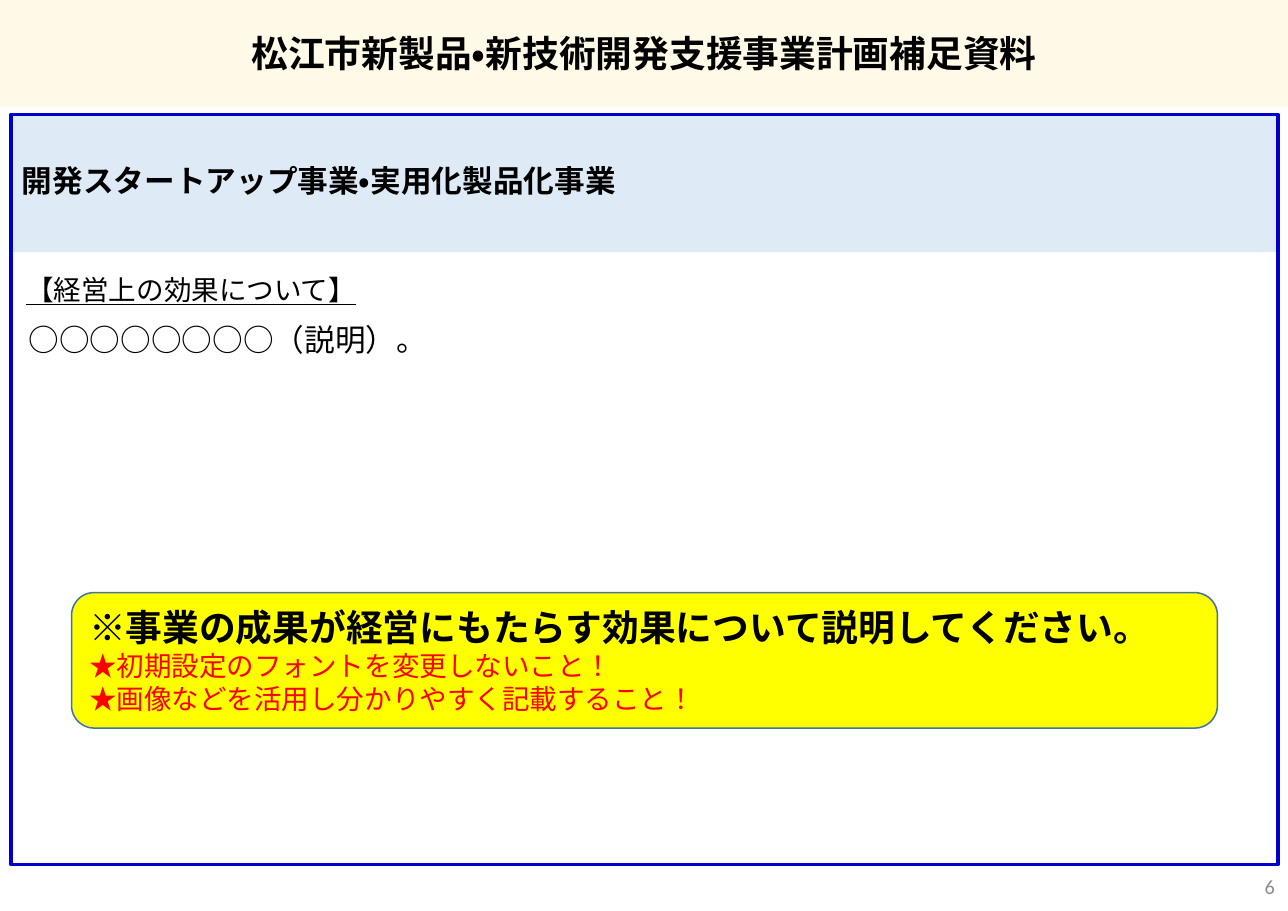
from dataclasses import dataclass

from lxml import etree
from pptx import Presentation
from pptx import util as u
from pptx.dml.color import RGBColor
from pptx.enum import lang, shapes, text


@dataclass(frozen=True)
class Theme:
    """Colours, fonts and type sizes of the slide."""
    black: str = "000000"
    red: str = "FF0000"
    grey: str = "8C8C8C"
    cream: str = "FFF9E7"
    pale: str = "DEEBF7"
    navy: str = "0000CC"
    yellow: str = "FFFF00"
    steel: str = "43739E"
    sans: str = "Noto Sans CJK JP"
    latin: str = "Calibri"
    head: str = "Arial"
    large: float = 24
    medium: float = 20
    small: float = 18
    tiny: float = 13.2


THEME = Theme()
ALIGN = text.PP_ALIGN
ANCHOR = text.MSO_ANCHOR


def place(item, box):
    """Move an item to a box given in inches."""
    item.left, item.top, item.width, item.height = map(u.Inches, box)


def paint(item, fill=None, line=None, width=1):
    """Set the fill and outline of a shape."""
    if fill:
        item.fill.solid()
        item.fill.fore_color.rgb = RGBColor.from_string(fill)
    else:
        item.fill.background()
    if line:
        item.line.color.rgb = RGBColor.from_string(line)
        item.line.width = u.Pt(width)
    else:
        item.line.fill.background()


def block(slide, kind, box, **look):
    """Add a flat preset shape."""
    item = slide.shapes.add_shape(kind, *map(u.Inches, box))
    item.shadow.inherit = False
    paint(item, **look)
    return item


def label(slide, box):
    """Add an empty text box."""
    return slide.shapes.add_textbox(*map(u.Inches, box))


def setup(item, insets=(0.1, 0.05, 0.1, 0.05), anchor=ANCHOR.MIDDLE, wrap=True):
    """Set the margins, anchor and wrapping of a text frame."""
    frame = item.text_frame
    frame.auto_size = text.MSO_AUTO_SIZE.NONE
    frame.word_wrap = wrap
    frame.vertical_anchor = anchor
    (frame.margin_left, frame.margin_top,
     frame.margin_right, frame.margin_bottom) = map(u.Inches, insets)
    return frame


def write(para, words, size, face, colour=THEME.black, bold=False,
          align=ALIGN.LEFT, before=0, spacing=1.0):
    """Fill and format one paragraph."""
    para.text = words
    para.alignment = align
    para.space_before = u.Pt(before)
    para.line_spacing = spacing
    font = para.font
    font.size = u.Pt(size)
    font.name = face
    font.bold = bold
    font.color.rgb = RGBColor.from_string(colour)
    font.language_id = lang.MSO_LANGUAGE_ID.JAPANESE


def unlist(para):
    """Remove the bullet and indent of a paragraph."""
    props = para._p.get_or_add_pPr()
    props.set("marL", "0")
    props.set("indent", "0")
    space = props.nsmap["a"]
    mark = etree.Element(f"{{{space}}}buNone")
    props.find(f"{{{space}}}defRPr").addprevious(mark)


def banner(slide, box):
    """Place the title across the top band."""
    title = slide.shapes.title
    place(title, box)
    paint(title, fill=THEME.cream)
    frame = setup(title, (0.1, 0.08, 0.1, 0.05))
    write(frame.paragraphs[0], "松江市新製品・新技術開発支援事業計画補足資料",
          THEME.large, THEME.sans, bold=True, align=ALIGN.CENTER,
          before=11, spacing=0.9)


def panel(slide, box):
    """Build the framed section with its heading and body."""
    left, top, width, height = box
    strip = block(slide, shapes.MSO_SHAPE.RECTANGLE,
                  (left, top - 0.01, width, 1.26), fill=THEME.pale)
    frame = setup(strip, (0.1, 0, 0.1, 0))
    write(frame.paragraphs[0], "開発スタートアップ事業・実用化製品化事業",
          THEME.medium, THEME.head, bold=True, spacing=0.9)

    body = slide.placeholders[1]
    place(body, (left, top + 1.82, width - 0.14, 0.82))
    frame = setup(body, (0.16, 0.05, 0, 0.05), ANCHOR.TOP)
    write(frame.paragraphs[0], "○○○○○○○○（説明）。",
          THEME.medium, THEME.sans, before=11)
    unlist(frame.paragraphs[0])

    block(slide, shapes.MSO_SHAPE.RECTANGLE, box, line=THEME.navy, width=2.25)

    topic = label(slide, (left, top + 1.39, 3.23, 0.4))
    para = setup(topic, wrap=False).paragraphs[0]
    write(para, "【経営上の効果について】", THEME.small, THEME.sans,
          align=ALIGN.RIGHT)
    para.font.underline = True


def notice(slide, box):
    """Build the yellow box of instructions."""
    card = block(slide, shapes.MSO_SHAPE.ROUNDED_RECTANGLE, box,
                 fill=THEME.yellow, line=THEME.steel)
    frame = setup(card, wrap=False)
    write(frame.paragraphs[0],
          "※事業の成果が経営にもたらす効果について説明してください。",
          THEME.large, THEME.latin, bold=True)
    for words in ("★初期設定のフォントを変更しないこと！",
                  "★画像などを活用し分かりやすく記載すること！"):
        write(frame.add_paragraph(), words, THEME.small, THEME.latin, THEME.red)


def footer(slide, box):
    """Write the page number."""
    frame = setup(label(slide, box), wrap=False)
    write(frame.paragraphs[0], "6", THEME.tiny, THEME.latin, THEME.grey,
          align=ALIGN.RIGHT)


def main():
    """Build and save the slide."""
    deck = Presentation()
    deck.slide_width = u.Inches(11.69)
    deck.slide_height = u.Inches(8.27)
    slide = deck.slides.add_slide(deck.slide_layouts[1])
    banner(slide, (0, 0, 11.69, 0.97))
    panel(slide, (0.1, 1.04, 11.5, 6.81))
    notice(slide, (0.65, 5.38, 10.4, 1.23))
    footer(slide, (11.37, 7.88, 0.3, 0.34))
    deck.save("out.pptx")


if __name__ == "__main__":
    main()
